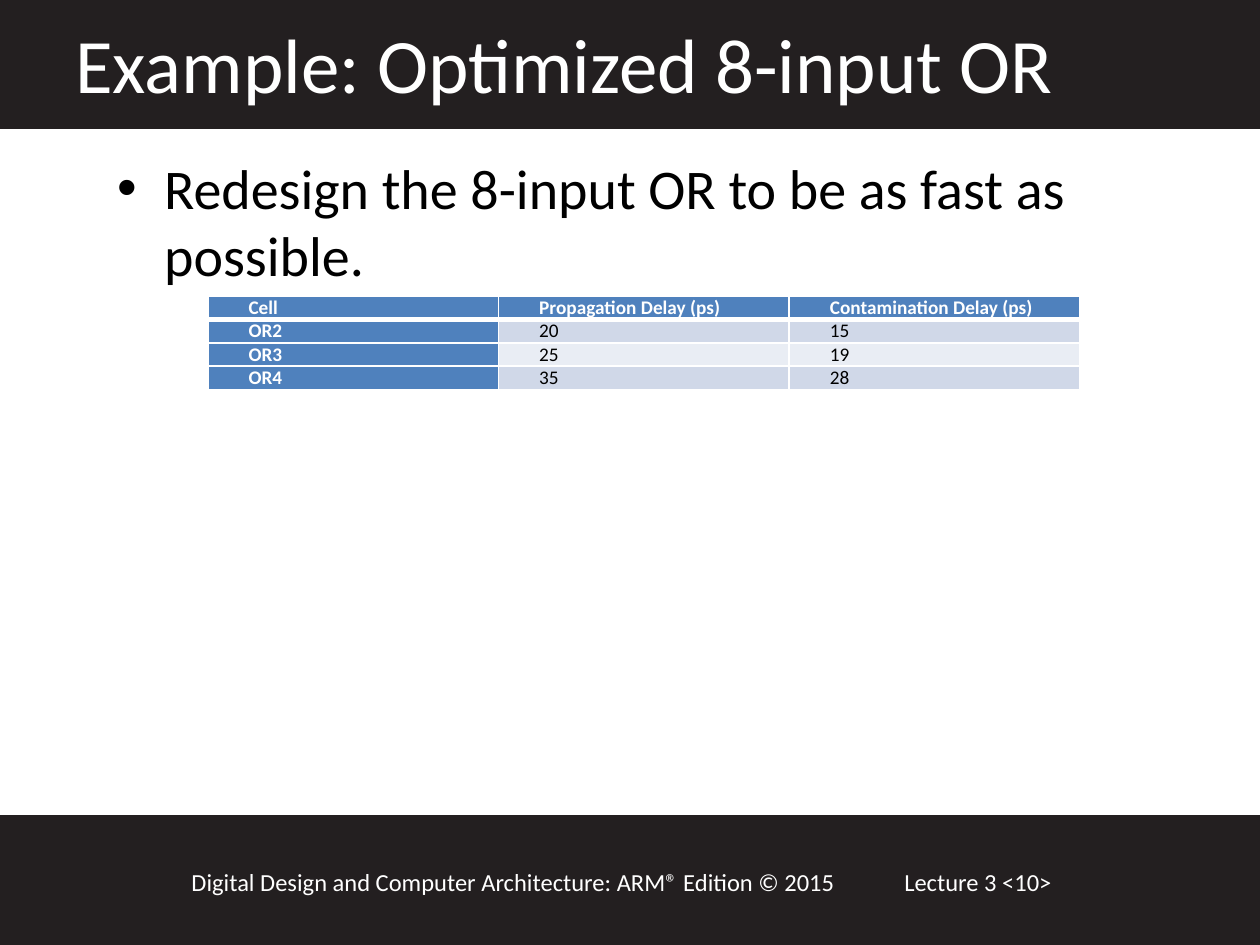
"""Builds the lecture slide about the optimized 8-input OR."""
from lxml.etree import SubElement
from pptx import Presentation
from pptx.dml.color import RGBColor
from pptx.enum.shapes import MSO_SHAPE
from pptx.oxml.ns import qn
from pptx.util import Cm, Pt

DARK, WHITE, BLACK, BLUE = "231F20", "FFFFFF", "000000", "4F81BD"
STRIPES = ["D0D8E8", "E9EDF4"]


def paint(target, color):
    target.rgb = RGBColor.from_string(color)


def write(paragraph, wording, color, **formats):
    run = paragraph.add_run()
    run.text = wording
    for attribute, value in {"name": "Calibri", **formats}.items():
        setattr(run.font, attribute, value)
    paint(run.font.color, color)


deck = Presentation()
deck.slide_width, deck.slide_height = Cm(25.4), Cm(19.05)
slide = deck.slides.add_slide(deck.slide_layouts[6])

for top, height in [(16.46, 2.59), (0, 2.57)]:
    band = slide.shapes.add_shape(MSO_SHAPE.RECTANGLE, 0, Cm(top), Cm(25.4), Cm(height))
    band.shadow.inherit = False
    band.fill.solid()
    paint(band.fill.fore_color, DARK)
    paint(band.line.color, DARK)
    band.line.width = Pt(2)

passages = [
    ("Lecture 3 <10>", (17.98, 17.35, 5.51, 0.86), 14, WHITE),
    ("Digital Design and Computer Architecture: ARM® Edition © 2015",
     (3.61, 17.35, 14.6, 0.86), 14, WHITE),
    ("Example: Optimized 8-input OR", (1.27, 0.2, 22.02, 2.13), 44, WHITE),
    ("Redesign the 8-input OR to be as fast as possible.",
     (2.11, 2.97, 22.43, 13.77), 32, BLACK),
]
for wording, place, size, color in passages:
    frame = slide.shapes.add_textbox(*map(Cm, place)).text_frame
    frame.word_wrap = True
    task = frame.paragraphs[0]
    write(task, wording, color, size=Pt(size))

task_format = task._p.get_or_add_pPr()
task_format.set("marL", str(Cm(0.95)))
task_format.set("indent", str(-Cm(0.95)))
SubElement(task_format, qn("a:buFont"), typeface="Arial")
SubElement(task_format, qn("a:buChar"), char="•")

delays = [
    ("Cell", "Propagation Delay (ps)", "Contamination Delay (ps)"),
    ("OR2", "20", "15"),
    ("OR3", "25", "19"),
    ("OR4", "35", "28"),
]
cell_format = {"margin_left": Cm(0.18), "margin_right": Cm(0.18),
               "margin_top": 0, "margin_bottom": 0}
delay_table = slide.shapes.add_table(
    len(delays), 3, Cm(4.19), Cm(5.97), Cm(17.58), Cm(1.88)).table
for row, gate in enumerate(delays):
    delay_table.rows[row].height = Cm(0.47)
    for column, value in enumerate(gate):
        cell = delay_table.cell(row, column)
        for attribute, setting in cell_format.items():
            setattr(cell, attribute, setting)
        heading = row == 0 or column == 0
        entry = cell.text_frame.paragraphs[0]
        entry._p.get_or_add_pPr().set("marL", str(Cm(0.64)))
        write(entry, value, WHITE if heading else BLACK, size=Pt(11), bold=heading)
        for side in "LRTB":
            below_header = (row, side) in [(0, "B"), (1, "T")]
            border = SubElement(cell._tc.get_or_add_tcPr(), qn(f"a:ln{side}"),
                                w=str(Pt(3 if below_header else 1)))
            SubElement(SubElement(border, qn("a:solidFill")), qn("a:srgbClr"), val=WHITE)
        cell.fill.solid()
        paint(cell.fill.fore_color, BLUE if heading else STRIPES[(row - 1) % 2])

deck.save("out.pptx")
